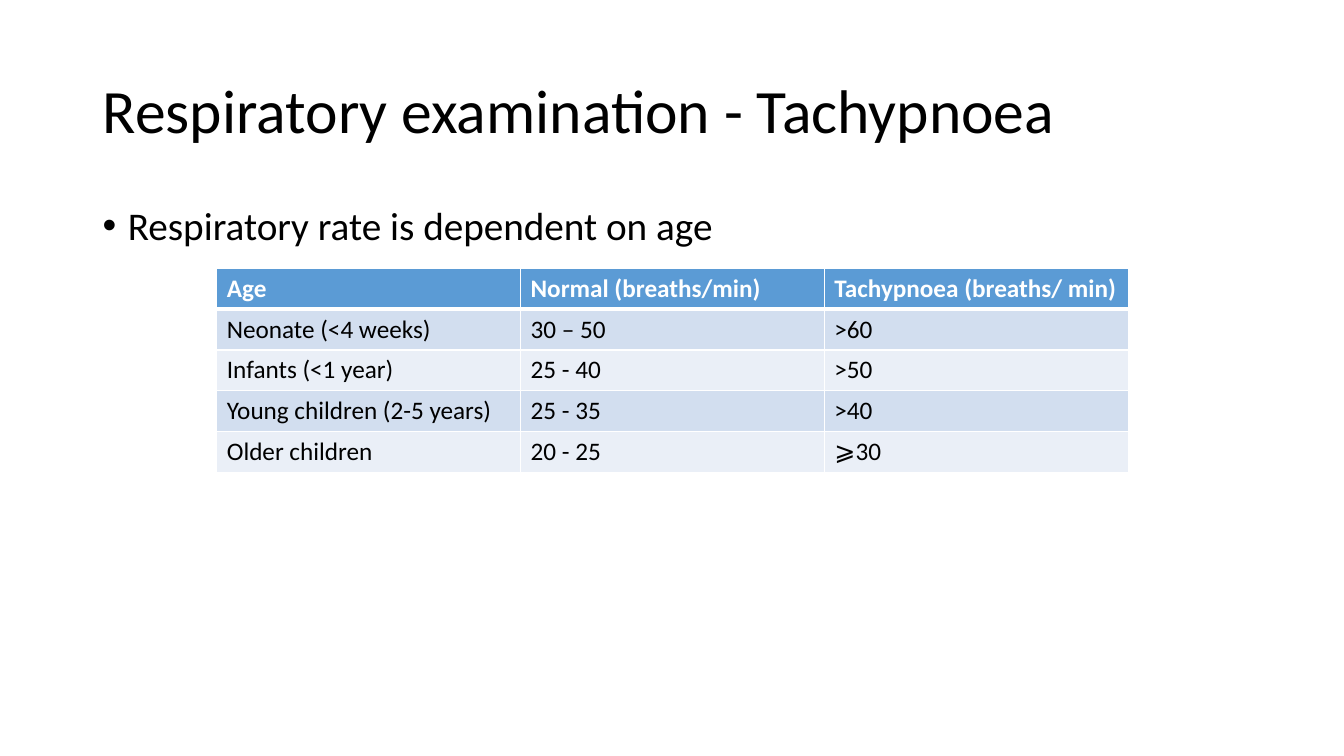
from dataclasses import dataclass

from lxml.etree import SubElement
from pptx import Presentation
from pptx.dml.color import RGBColor
from pptx.enum.text import MSO_ANCHOR as Anchor, MSO_AUTO_SIZE as AutoSize, PP_ALIGN as Align
from pptx.oxml.ns import qn
from pptx.util import Inches, Pt

WIDTH, HEIGHT = 13.33, 7.5
FONT = "Calibri"
BLACK, WHITE = "000000", "FFFFFF"
HEADER_FILL, BANDS = "5B9BD5", ("D2DEEF", "EAEFF7")

ROWS = (
    ("Age", "Normal (breaths/min)", "Tachypnoea (breaths/ min)"),
    ("Neonate (<4 weeks)", "30 – 50", ">60"),
    ("Infants (<1 year)", "25 - 40", ">50"),
    ("Young children (2-5 years)", "25 - 35", ">40"),
    ("Older children", "20 - 25", "⩾30"),
)


@dataclass(frozen=True)
class Box:
    left: float
    top: float
    width: float
    height: float

    def emu(self) -> tuple[int, ...]:
        return tuple(Inches(v) for v in (self.left, self.top, self.width, self.height))


@dataclass(frozen=True)
class RowStyle:
    fill: str
    color: str = BLACK
    bold: bool = False
    top: float = 1
    bottom: float = 1


MARGIN = 0.92
TITLE = Box(MARGIN, 0.4, WIDTH - 2 * MARGIN, 1.45)
BODY = Box(MARGIN, 2, WIDTH - 2 * MARGIN, 4.76)
TABLE = Box(2.15, 2.66, 9.04, 2.03)


def rgb(value: str) -> RGBColor:
    return RGBColor.from_string(value)


def write(tf, text: str, *, size: float, color: str = BLACK, bold: bool = False,
          line: float = 1, before: float = 0, anchor=Anchor.TOP):
    tf.word_wrap = True
    tf.vertical_anchor = anchor
    p = tf.paragraphs[0]
    p.alignment = Align.LEFT
    p.line_spacing = line
    p.space_before = Pt(before)
    r = p.add_run()
    r.text = text
    r.font.name = FONT
    r.font.size = Pt(size)
    r.font.bold = bold
    r.font.color.rgb = rgb(color)
    return p


def add_bullet(p, indent: float) -> None:
    props = p._p.get_or_add_pPr()
    props.set("marL", str(Inches(indent)))
    props.set("indent", str(-Inches(indent)))
    SubElement(props, qn("a:buFont"), typeface="Arial")
    SubElement(props, qn("a:buChar"), char="•")


def set_borders(cell, style: RowStyle) -> None:
    props = cell._tc.get_or_add_tcPr()
    widths = {"L": 1, "R": 1, "T": style.top, "B": style.bottom}
    for i, (side, width) in enumerate(widths.items()):
        ln = props.makeelement(qn(f"a:ln{side}"), {"w": str(Pt(width))})
        fill = SubElement(ln, qn("a:solidFill"))
        SubElement(fill, qn("a:srgbClr"), val=WHITE)
        props.insert(i, ln)


def row_style(row: int) -> RowStyle:
    if row == 0:
        return RowStyle(HEADER_FILL, WHITE, bold=True, bottom=3)
    return RowStyle(BANDS[(row - 1) % 2], top=3 if row == 1 else 1)


def add_rates(s, box: Box, rows: tuple[tuple[str, ...], ...]) -> None:
    table = s.shapes.add_table(len(rows), len(rows[0]), *box.emu()).table
    for i, texts in enumerate(rows):
        style = row_style(i)
        for j, text in enumerate(texts):
            cell = table.cell(i, j)
            cell.fill.solid()
            cell.fill.fore_color.rgb = rgb(style.fill)
            set_borders(cell, style)
            write(cell.text_frame, text, size=18, color=style.color, bold=style.bold)


def main() -> None:
    prs = Presentation()
    prs.slide_width, prs.slide_height = Inches(WIDTH), Inches(HEIGHT)
    s = prs.slides.add_slide(prs.slide_layouts.get_by_name("Title Only"))

    title = s.shapes.title
    title.left, title.top, title.width, title.height = TITLE.emu()
    title.text_frame.auto_size = AutoSize.NONE
    write(title.text_frame, "Respiratory examination - Tachypnoea",
          size=44, line=0.9, anchor=Anchor.MIDDLE)

    body = s.shapes.add_textbox(*BODY.emu())
    p = write(body.text_frame, "Respiratory rate is dependent on age",
              size=28, line=0.9, before=10)
    add_bullet(p, 0.25)

    add_rates(s, TABLE, ROWS)
    prs.save("out.pptx")


if __name__ == "__main__":
    main()
